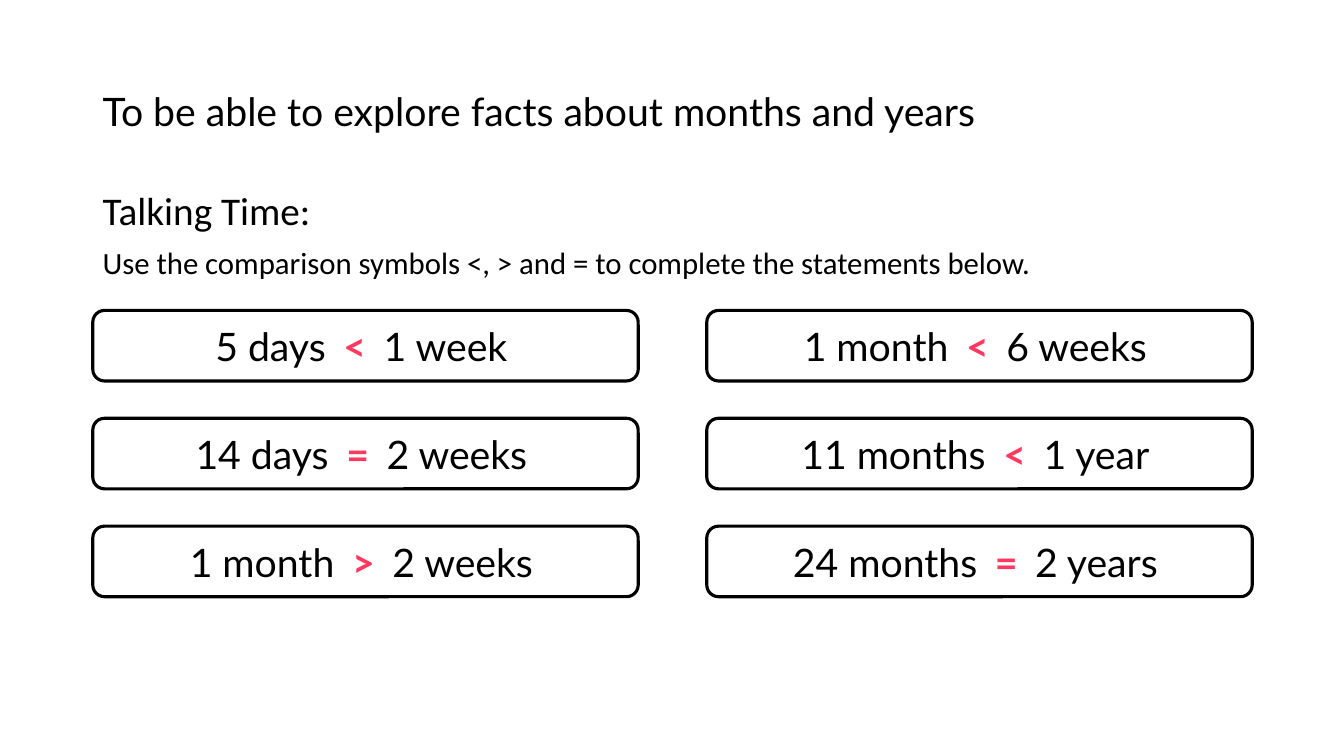
from pptx import Presentation
from pptx.dml.color import RGBColor
from pptx.enum import shapes, text
from pptx.util import Inches, Pt

TITLE = "To be able to explore facts about months and years"
INSTRUCTIONS = [
    ("Talking Time:", 28),
    ("Use the comparison symbols <, > and = to complete the statements below.", 22),
]
STATEMENT_COLUMNS = [
    [("5 days", "<", "1 week"), ("14 days", "=", "2 weeks"), ("1 month", ">", "2 weeks")],
    [("1 month", "<", "6 weeks"), ("11 months", "<", "1 year"), ("24 months", "=", "2 years")],
]

BLACK = RGBColor(0x00, 0x00, 0x00)
WHITE = RGBColor(0xFF, 0xFF, 0xFF)
PINK = RGBColor(0xFF, 0x38, 0x60)

LEFT = 0.92
CARD_TOP, CARD_WIDTH, CARD_HEIGHT = 3.08, 5.41, 0.7
COLUMN_STEP, ROW_STEP = 6.09, 1.07
GAP_SPACING = "540"  # hundredths of a point


def add_run(paragraph, words, size=28, name="Lato", color=BLACK, bold=False):
    run = paragraph.add_run()
    run.text = words
    for key, value in {"size": Pt(size), "name": name, "bold": bold}.items():
        setattr(run.font, key, value)
    run.font.color.rgb = color
    return run


def add_frame(slide, left, top, width, height, anchor):
    """Add a wrapping text box and return its text frame."""
    frame = slide.shapes.add_textbox(*map(Inches, (left, top, width, height))).text_frame
    frame.word_wrap = True
    frame.vertical_anchor = anchor
    return frame


def add_statement(slide, left, top, statement):
    card = slide.shapes.add_shape(
        shapes.MSO_SHAPE.ROUNDED_RECTANGLE,
        *map(Inches, (left, top, CARD_WIDTH, CARD_HEIGHT)))
    card.shadow.inherit = False
    card.fill.solid()
    card.fill.fore_color.rgb = WHITE
    card.line.color.rgb = BLACK
    card.line.width = Pt(2.25)
    frame = card.text_frame
    frame.vertical_anchor = text.MSO_ANCHOR.MIDDLE
    frame.margin_right = Inches(0.18)
    paragraph = frame.paragraphs[0]
    paragraph.alignment = text.PP_ALIGN.CENTER

    first, symbol, second = statement
    add_run(paragraph, first)
    for words, color, bold in ((symbol, PINK, True), (second, BLACK, False)):
        gap = add_run(paragraph, " ")
        gap.font._element.set("spc", GAP_SPACING)
        add_run(paragraph, words, color=color, bold=bold)


def main():
    deck = Presentation()
    deck.slide_width, deck.slide_height = Inches(13.33), Inches(7.5)
    slide = deck.slides.add_slide(deck.slide_layouts[6])

    title = add_frame(slide, LEFT, 0.4, 9.6, 1.45, text.MSO_ANCHOR.MIDDLE).paragraphs[0]
    title.line_spacing = 0.9
    add_run(title, TITLE)

    body = add_frame(slide, LEFT, 1.85, 11.5, 4.76, text.MSO_ANCHOR.TOP)
    for index, (words, size) in enumerate(INSTRUCTIONS):
        paragraph = body.add_paragraph() if index else body.paragraphs[0]
        paragraph.line_spacing = 0.9
        if index:
            paragraph.space_before = Pt(10)
        add_run(paragraph, words, size, "Calibri")

    for column, statements in enumerate(STATEMENT_COLUMNS):
        for row, statement in enumerate(statements):
            add_statement(slide, LEFT + column * COLUMN_STEP,
                          CARD_TOP + row * ROW_STEP, statement)

    deck.save("out.pptx")


if __name__ == "__main__":
    main()
